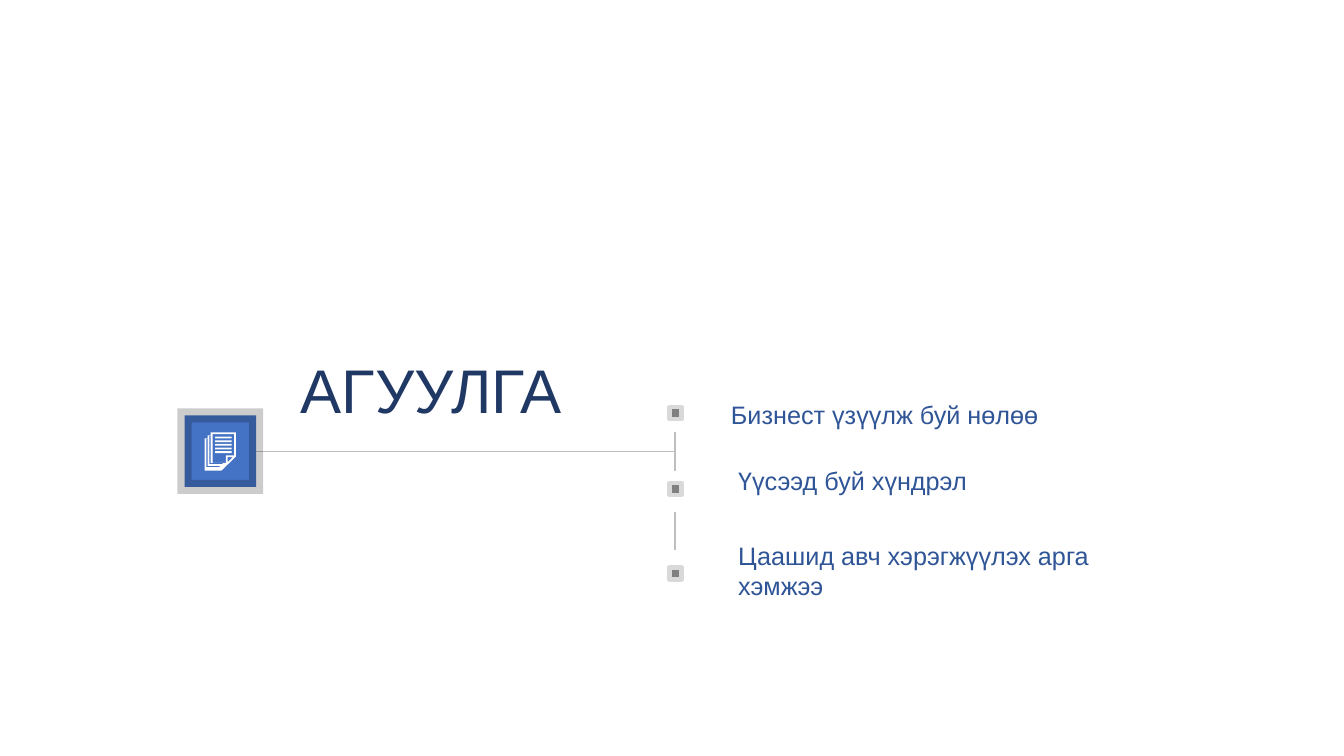
import pptx
import pptx.util
import pptx.dml.color
import pptx.enum.shapes
import pptx.enum.text
import pptx.oxml
import pptx.oxml.ns
import lxml.etree

RGBColor = pptx.dml.color.RGBColor
NAVY = RGBColor(0x20, 0x38, 0x64)
BLUE = RGBColor(0x2F, 0x55, 0x97)
TILE = RGBColor(0x44, 0x72, 0xC4)
GRAY = RGBColor(0x80, 0x80, 0x80)
RULE = RGBColor(0xBF, 0xBF, 0xBF)
BORDER = RGBColor(0xD9, 0xD9, 0xD9)
BLACK = RGBColor(0, 0, 0)
WHITE = RGBColor(0xFF, 0xFF, 0xFF)
FONT = "Arial"
TITLE = "АГУУЛГА"
TOPICS = [
    ("Бизнест үзүүлж буй нөлөө", 0, 0),
    ("Үүсээд буй хүндрэл", 25.4, 0.7),
    ("Цаашид авч хэрэгжүүлэх арга хэмжээ", 31.9, 0.7),
]


def grid(cells):
    """Turn a count of grid cells, ten to the inch, into a length."""
    return pptx.util.Inches(cells / 10)


def sub(parent, tag, **attrs):
    """Append a drawing element with its attributes."""
    element = lxml.etree.SubElement(parent, pptx.oxml.ns.qn(tag))
    for name, value in attrs.items():
        element.set(name, str(value))
    return element


def write(p, text, size, color, align=pptx.enum.text.PP_ALIGN.LEFT, before=0, indent=0):
    """Fill a paragraph with one formatted run and no bullet."""
    p.alignment = align
    p.space_before = pptx.util.Pt(before)
    pPr = p._p.get_or_add_pPr()
    pPr.set("marL", str(grid(indent)))
    pPr.set("indent", "0")
    sub(pPr, "a:buNone")
    r = p.add_run()
    r.text = text
    r.font.name = FONT
    r.font.size = pptx.util.Pt(size)
    r.font.color.rgb = color


def place(sp, x, y, w, h):
    """Put a placeholder in a box and return its text frame."""
    sp.left, sp.top, sp.width, sp.height = (grid(n) for n in (x, y, w, h))
    tf = sp.text_frame
    tf.word_wrap = True
    tf.auto_size = pptx.enum.text.MSO_AUTO_SIZE.NONE
    tf.vertical_anchor = pptx.enum.text.MSO_ANCHOR.TOP
    return tf


def square(s, x, y, side, fill, line, width, join):
    """Draw a bordered square and return it."""
    sp = s.shapes.add_shape(
        pptx.enum.shapes.MSO_SHAPE.RECTANGLE, grid(x), grid(y), grid(side), grid(side))
    sp.shadow.inherit = False
    sp.fill.solid()
    sp.fill.fore_color.rgb = fill
    sp.line.color.rgb = line
    sp.line.width = pptx.util.Pt(width)
    sub(sp.line._get_or_add_ln(), join)
    return sp


def rule(s, x1, y1, x2, y2):
    """Draw a thin gray line."""
    line = s.shapes.add_connector(
        pptx.enum.shapes.MSO_CONNECTOR.STRAIGHT, grid(x1), grid(y1), grid(x2), grid(y2))
    line.line.color.rgb = RULE
    line.line.width = pptx.util.Pt(1)
    sub(line._element.spPr, "a:effectLst")


def pages_icon(s, x, y):
    """Draw a stack of written pages in thousandths of an inch."""
    outline = [(70, 0), (310, 0), (310, 240), (165, 380), (0, 380), (0, 60),
               (30, 60), (30, 30), (60, 30), (60, 0)]
    sheets = [[(dx, 80 - dx), (dx + 12, 80 - dx), (dx + 12, 350 - dx),
               (dx + 130, 350 - dx), (dx + 130, 362 - dx), (dx, 362 - dx)]
              for dx in (18, 48)]
    front = [(80, 18), (292, 18), (292, 228), (210, 228), (210, 302), (80, 302)]
    fold = [(228, 245), (280, 245), (228, 295)]
    bars = [[(105, top), (268, top), (268, top + 18), (105, top + 18)]
            for top in range(42, 222, 36)]
    builder = s.shapes.build_freeform(*outline[0], scale=914.4)
    builder.add_line_segments(outline[1:])
    for contour in sheets + [front, fold] + bars:
        builder.move_to(*contour[0])
        builder.add_line_segments(contour[1:])
    sp = builder.convert_to_shape(grid(x), grid(y))
    sp.shadow.inherit = False
    sp.fill.solid()
    sp.fill.fore_color.rgb = WHITE
    sp.line.fill.background()


def heading(s, x, y, w, h):
    """Place the icon tile, the title and the line under the title."""
    side = 7.1
    rule(s, x + side, y + 10.4, x + w, y + 10.4)
    tile = square(s, x, y + 6.8, side, TILE, BLACK, 10, "a:miter")
    color = tile.line._get_or_add_ln().find(".//" + pptx.oxml.ns.qn("a:srgbClr"))
    sub(color, "a:alpha", val=20000)
    pages_icon(s, x + 2, y + 8.5)
    tf = place(s.shapes.title, x + 6.2, y, 36.6, h)
    write(tf.paragraphs[0], TITLE, 44, NAVY, pptx.enum.text.PP_ALIGN.CENTER)


def topics(s, x, y, w, h):
    """Place the marker rail and the list of topics."""
    for top in (1.3, 8.8, 17.2):
        square(s, x, y + top, 1.2, GRAY, BORDER, 3, "a:round")
    for top in (3.8, 11.7):
        rule(s, x + 0.55, y + top, x + 0.55, y + top + 3.8)
    tf = place(s.placeholders[1], x + 5.1, y, w - 5.1, h)
    for i, (text, before, indent) in enumerate(TOPICS):
        p = tf.add_paragraph() if i else tf.paragraphs[0]
        write(p, text, 18, BLUE, before=before, indent=indent)


def main():
    """Build the contents slide."""
    prs = pptx.Presentation()
    prs.slide_width = pptx.util.Inches(13.33)
    prs.slide_height = pptx.util.Inches(7.5)
    s = prs.slides.add_slide(prs.slide_layouts[1])
    for sp in list(s.placeholders)[2:]:
        sp._element.getparent().remove(sp._element)
    heading(s, 18.3, 34.4, 48.6, 8.4)
    topics(s, 66.4, 39.1, 50, 20.8)
    prs.save("out.pptx")


if __name__ == "__main__":
    main()
